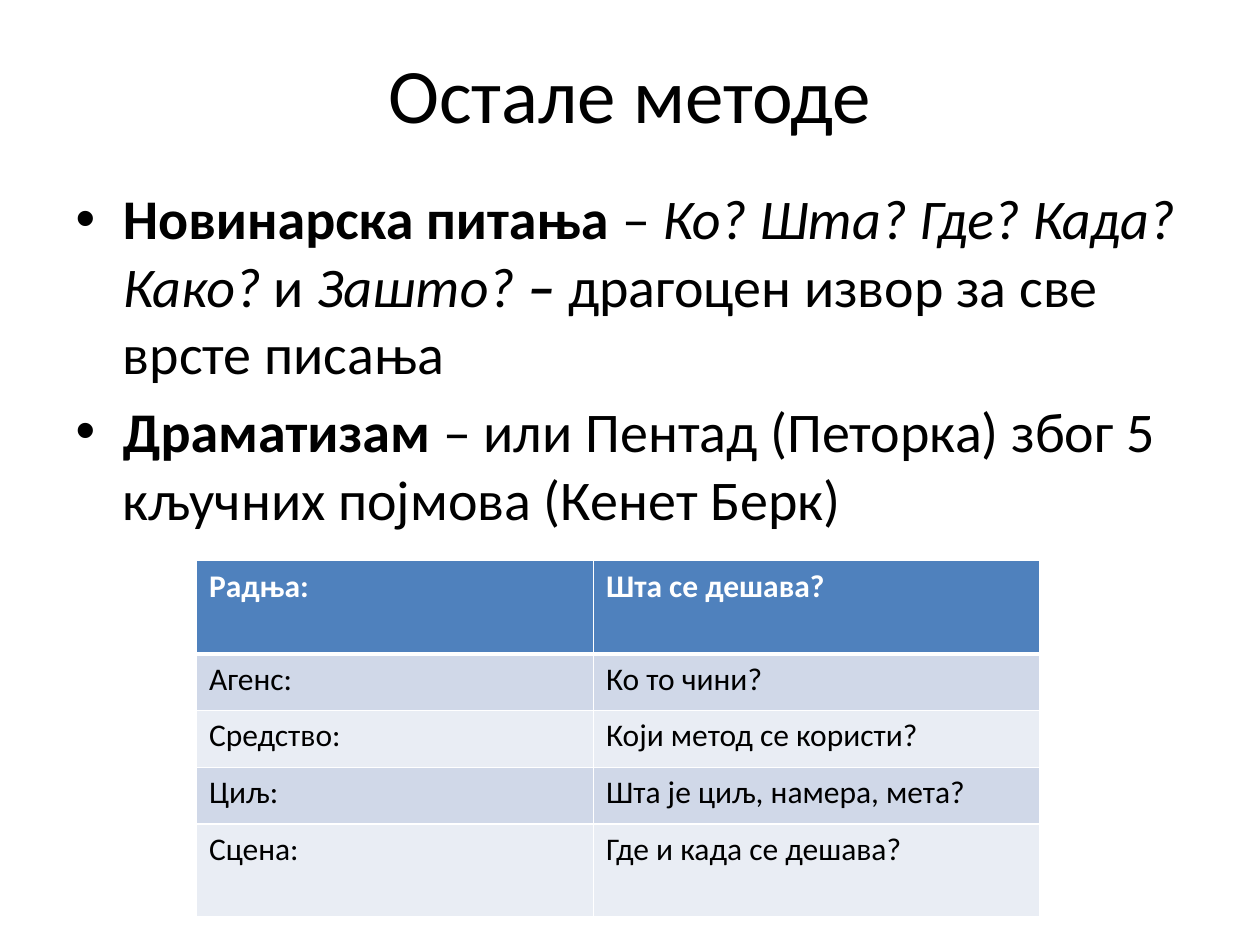
from pptx import Presentation
from pptx.dml.color import RGBColor
from pptx.enum.text import MSO_ANCHOR, PP_ALIGN
from pptx.oxml.ns import qn
from pptx.util import Inches, Pt
from lxml.etree import SubElement

FONT = "Calibri"
COLORS = {
    "text": "000000",
    "white": "FFFFFF",
    "header": "4F81BD",
    "band_dark": "D0D8E8",
    "band_light": "E9EDF4",
}
# Each run is (text, bold, italic)
BULLETS = [
    [
        ("Новинарска питања ", True, False),
        ("– ", False, False),
        ("Ко? Шта? Где? Када? Како? ", False, True),
        ("и ", False, False),
        ("Зашто? ", False, True),
        ("– ", True, True),
        ("драгоцен извор за све врсте писања", False, False),
    ],
    [
        ("Драматизам", True, False),
        (" – или Пентад (Петорка) због 5 кључних појмова (Кенет Берк)", False, False),
    ],
]
PENTAD = [
    ("Радња:", "Шта се дешава?"),
    ("Агенс:", "Ко то чини?"),
    ("Средство:", "Који метод се користи?"),
    ("Циљ:", "Шта је циљ, намера, мета?"),
    ("Сцена:", "Где и када се дешава?"),
]
COL_WIDTHS = [3.15, 3.54]
ROW_HEIGHTS = [0.74, 0.45, 0.45, 0.45, 0.74]


def add_run(p, text, size, color="text", bold=False, italic=False):
    r = p.add_run()
    r.text = text
    r.font.name = FONT
    r.font.size = Pt(size)
    r.font.bold = bold
    r.font.italic = italic
    r.font.color.rgb = RGBColor.from_string(COLORS[color])


def place(shape, left, top, width, height):
    shape.left, shape.top = Inches(left), Inches(top)
    shape.width, shape.height = Inches(width), Inches(height)


def fill_title(title, text):
    place(title, 0.5, 0.3, 9, 0.87)
    tf = title.text_frame
    tf.vertical_anchor = MSO_ANCHOR.MIDDLE
    p = tf.paragraphs[0]
    p.alignment = PP_ALIGN.CENTER
    add_run(p, text, 44)


def fill_body(body, bullets):
    place(body, 0.5, 1.41, 9, 5.78)
    tf = body.text_frame
    for i, runs in enumerate(bullets):
        p = tf.add_paragraph() if i else tf.paragraphs[0]
        for text, bold, italic in runs:
            add_run(p, text, 32, bold=bold, italic=italic)


def set_borders(cell, widths):
    """Draw white borders; widths maps the tags lnL, lnR, lnT, lnB to points."""
    tcPr = cell._tc.get_or_add_tcPr()
    for tag, width in widths.items():
        ln = SubElement(tcPr, qn(f"a:{tag}"), w=str(Pt(width)))
        fill = SubElement(ln, qn("a:solidFill"))
        SubElement(fill, qn("a:srgbClr"), val=COLORS["white"])


def row_fill(row):
    if row == 0:
        return "header"
    return "band_dark" if row % 2 else "band_light"


def add_pentad_table(s, rows):
    frame = s.shapes.add_table(
        len(rows), len(COL_WIDTHS), Inches(1.56), Inches(4.45),
        Inches(sum(COL_WIDTHS)), Inches(sum(ROW_HEIGHTS)))
    table = frame.table
    for column, width in zip(table.columns, COL_WIDTHS):
        column.width = Inches(width)
    for i, (texts, height) in enumerate(zip(rows, ROW_HEIGHTS)):
        table.rows[i].height = Inches(height)
        header = i == 0
        for j, text in enumerate(texts):
            cell = table.cell(i, j)
            set_borders(cell, {"lnL": 1, "lnR": 1,
                               "lnT": 3 if i == 1 else 1,
                               "lnB": 3 if header else 1})
            cell.fill.solid()
            cell.fill.fore_color.rgb = RGBColor.from_string(COLORS[row_fill(i)])
            add_run(cell.text_frame.paragraphs[0], text, 18,
                    "white" if header else "text", bold=header)


def main():
    prs = Presentation()
    prs.slide_width, prs.slide_height = Inches(10), Inches(7.5)
    s = prs.slides.add_slide(prs.slide_layouts[1])
    fill_title(s.shapes.title, "Остале методе")
    fill_body(s.placeholders[1], BULLETS)
    add_pentad_table(s, PENTAD)
    prs.save("out.pptx")


if __name__ == "__main__":
    main()
